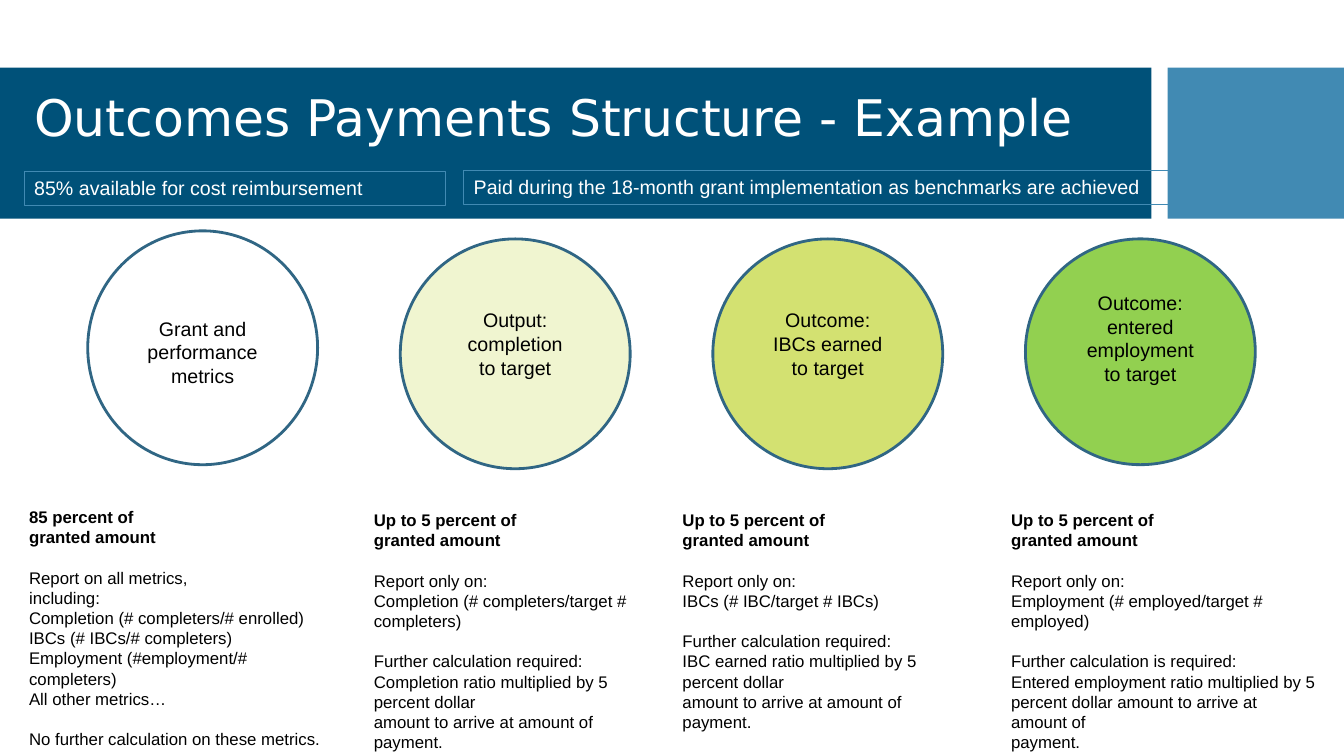
from pptx import Presentation
from pptx.dml.color import RGBColor
from pptx.enum.shapes import MSO_SHAPE
from pptx.enum.text import MSO_ANCHOR, PP_ALIGN
from pptx.util import Inches, Pt

RECT, CIRCLE = MSO_SHAPE.RECTANGLE, MSO_SHAPE.OVAL
LEFT, CENTER = PP_ALIGN.LEFT, PP_ALIGN.CENTER
TOP, MIDDLE = MSO_ANCHOR.TOP, MSO_ANCHOR.MIDDLE

# Content
TITLE = "Outcomes Payments Structure - Example"
# Text, left, top, width
NOTES = [
    ("85% available for cost reimbursement", 0.24, 1.7, 4.18),
    ("Paid during the 18-month grant implementation as benchmarks are achieved",
     4.6, 1.69, 8.65),
]
SHARE = ["Up to 5 percent of", "granted amount"]
PAYMENT = "amount to arrive at amount of payment."
# Each detail is a list of blocks; the first block is the bold heading
STAGES = [
    dict(label=["Grant and", "performance", "metrics"], fill=None,
         circle_top=2.29, circle_height=2.32, label_top=3.09,
         detail_left=0.19, detail_top=4.98, detail_width=3.1,
         detail=[["85 percent of", "granted amount"],
                 ["Report on all metrics,", "including:",
                  "Completion (# completers/# enrolled)",
                  "IBCs (# IBCs/# completers)",
                  "Employment (#employment/# completers)",
                  "All other metrics…"],
                 ["No further calculation on these metrics."]]),
    dict(label=["Output:", "completion", "to target"], fill="pale",
         circle_top=2.37, circle_height=2.28, label_top=3.01,
         detail_left=3.61, detail_top=5.01, detail_width=2.74,
         detail=[SHARE,
                 ["Report only on:",
                  "Completion (# completers/target # completers)"],
                 ["Further calculation required:",
                  "Completion ratio multiplied by 5 percent dollar", PAYMENT]]),
    dict(label=["Outcome:", "IBCs earned", "to target"], fill="lime",
         circle_top=2.37, circle_height=2.28, label_top=3.01,
         detail_left=6.67, detail_top=5.01, detail_width=2.95,
         detail=[SHARE,
                 ["Report only on:", "IBCs (# IBC/target # IBCs)"],
                 ["Further calculation required:",
                  "IBC earned ratio multiplied by 5 percent dollar", PAYMENT]]),
    dict(label=["Outcome:", "entered", "employment", "to target"], fill="green",
         circle_top=2.37, circle_height=2.24, label_top=2.84,
         detail_left=9.93, detail_top=5.01, detail_width=3.23,
         detail=[SHARE,
                 ["Report only on:", "Employment (# employed/target # employed)"],
                 ["Further calculation is required:",
                  "Entered employment ratio multiplied by 5",
                  "percent dollar amount to arrive at amount of", "payment."]]),
]

# Format
COLORS = dict(navy="005179", blue="418AB3", ring="306684", white="FFFFFF",
              black="000000", pale="F0F5D0", lime="D3E171", green="92D050")
SLIDE_W, SLIDE_H = 13.33, 7.5
BAND_TOP, BAND_H = 0.67, 1.5
CIRCLE_LEFT, CIRCLE_W, CIRCLE_PITCH = 0.87, 2.28, 3.1
BLOCK_GAP = 14.4
TITLE_FONT = dict(name="DejaVu Sans", size=Pt(36), bold=False)
NOTE_FONT = dict(name="Arial", size=Pt(14), bold=False)
DETAIL_FONT = dict(name="Arial", size=Pt(12), bold=False)
HEADING_FONT = dict(DETAIL_FONT, bold=True)


def rgb(color):
    return RGBColor.from_string(COLORS[color])


def inches(*lengths):
    return [Inches(length) for length in lengths]


def add_panel(slide, kind, box, fill=None, line=None, weight=0.75):
    panel = slide.shapes.add_shape(kind, *inches(*box))
    panel.shadow.inherit = False
    if fill:
        panel.fill.solid()
        panel.fill.fore_color.rgb = rgb(fill)
    else:
        panel.fill.background()
    if line:
        panel.line.color.rgb = rgb(line)
        panel.line.width = Pt(weight)
    else:
        panel.line.fill.background()
    return panel


def write(frame, blocks, fonts, color, align=LEFT, anchor=TOP, wrap=True):
    """Write blocks of lines, one font per block, with a gap between blocks."""
    frame.word_wrap, frame.vertical_anchor = wrap, anchor
    rows = [(line, font, block > 0 and row == 0)
            for block, (lines, font) in enumerate(zip(blocks, fonts))
            for row, line in enumerate(lines)]
    for index, (line, font, gap) in enumerate(rows):
        paragraph = frame.add_paragraph() if index else frame.paragraphs[0]
        paragraph.alignment = align
        if gap:
            paragraph.space_before = Pt(BLOCK_GAP)
        run = paragraph.add_run()
        run.text = line
        run.font.color.rgb = rgb(color)
        for key, value in font.items():
            setattr(run.font, key, value)


def main():
    deck = Presentation()
    deck.slide_width, deck.slide_height = inches(SLIDE_W, SLIDE_H)
    slide = deck.slides.add_slide(deck.slide_layouts[5])

    # Header bands
    for left, width, color in [(0, 11.42, "navy"), (11.58, 1.75, "blue")]:
        add_panel(slide, RECT, (left, BAND_TOP, width, BAND_H), color)

    # Title, brought in front of the bands
    title = slide.shapes.title
    slide.shapes._spTree.append(title._element)
    title.left, title.top, title.width, title.height = inches(0.24, 0.95, 10.9, 0.49)
    write(title.text_frame, [[TITLE]], [TITLE_FONT], "white", anchor=MIDDLE)
    title.text_frame.paragraphs[0].line_spacing = 0.9

    # Framed notes
    for note, left, top, width in NOTES:
        panel = add_panel(slide, RECT, (left, top, width, 0.34), line="blue")
        write(panel.text_frame, [[note]], [NOTE_FONT], "white")

    # Stages: circle, label and detail
    for column, stage in enumerate(STAGES):
        left = CIRCLE_LEFT + column * CIRCLE_PITCH
        add_panel(slide, CIRCLE,
                  (left, stage["circle_top"], CIRCLE_W, stage["circle_height"]),
                  stage["fill"], "ring", 2)
        label = slide.shapes.add_textbox(
            *inches(left, stage["label_top"], CIRCLE_W, 0.81))
        write(label.text_frame, [stage["label"]], [NOTE_FONT], "black", CENTER)
        detail = slide.shapes.add_textbox(
            *inches(stage["detail_left"], stage["detail_top"],
                    stage["detail_width"], 2.52))
        write(detail.text_frame, stage["detail"],
              [HEADING_FONT, DETAIL_FONT, DETAIL_FONT], "black")

    deck.save("out.pptx")


if __name__ == "__main__":
    main()
